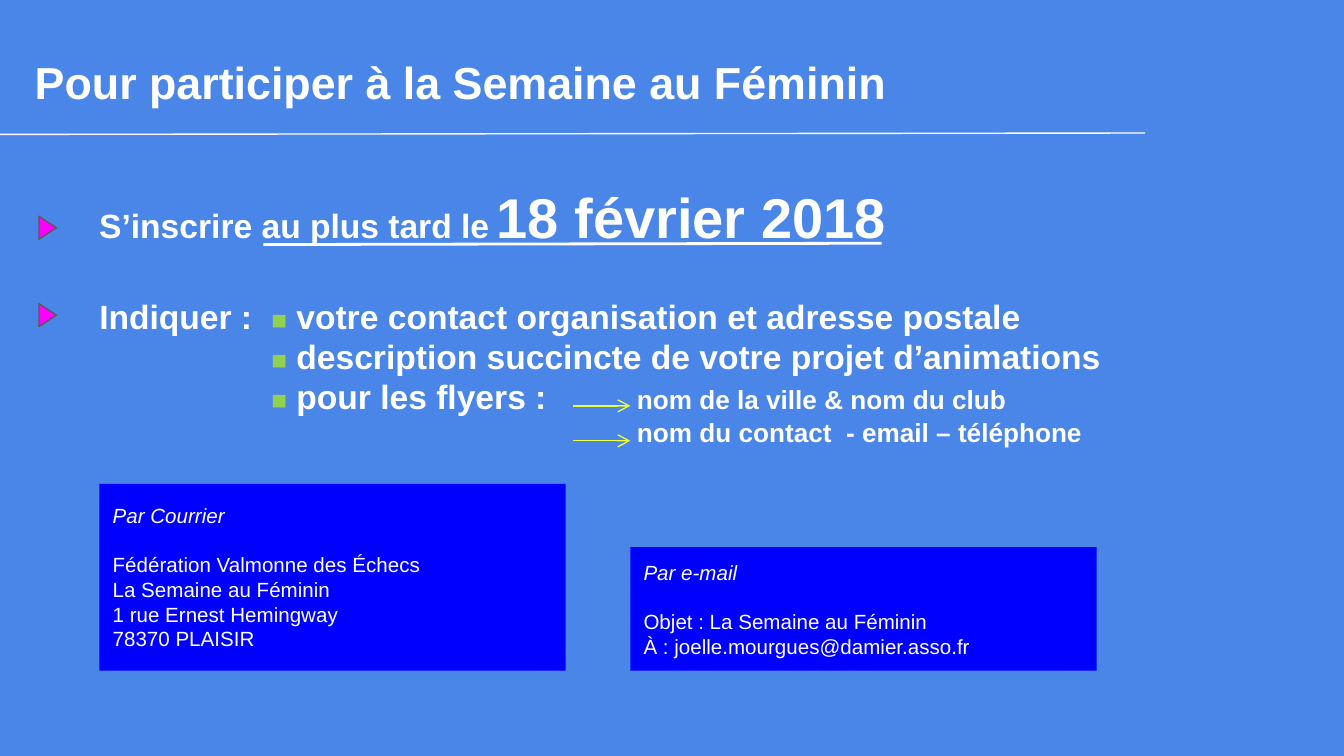
from dataclasses import dataclass

from lxml import etree
from pptx import Presentation
from pptx import util as u
from pptx.dml.color import RGBColor
from pptx.enum import shapes, text
from pptx.oxml import ns


@dataclass(frozen=True)
class Theme:
    font: str = "Arial"
    background: str = "4A86E8"
    ink: str = "FFFFFF"
    card: str = "0000FF"
    marker: str = "FF00FF"
    marker_edge: str = "595959"
    square: str = "92D050"
    arrow: str = "EDFE3B"
    title: int = 24
    date: int = 30
    body: int = 18
    detail: int = 14
    address: int = 11


THEME = Theme()


def rgb(value):
    return RGBColor.from_string(value)


def box_of(*lengths):
    return [u.Inches(length) for length in lengths]


def add_run(paragraph, words, size, color=THEME.ink, bold=False, italic=False):
    run = paragraph.add_run()
    run.text = words
    run.font.name = THEME.font
    run.font.size = u.Pt(size)
    run.font.bold = bold
    run.font.italic = italic
    run.font.color.rgb = rgb(color)


def prepare_frame(frame, anchor=text.MSO_ANCHOR.TOP):
    frame.word_wrap = True
    frame.vertical_anchor = anchor
    frame.margin_left = frame.margin_right = u.Inches(0.1)
    frame.margin_top = frame.margin_bottom = u.Inches(0.1)


def next_paragraph(frame, index):
    paragraph = frame.add_paragraph() if index else frame.paragraphs[0]
    paragraph.alignment = text.PP_ALIGN.LEFT
    return paragraph


def add_tab_stops(paragraph, stops):
    tabs = etree.SubElement(paragraph._p.get_or_add_pPr(), ns.qn("a:tabLst"))
    for stop in stops:
        etree.SubElement(tabs, ns.qn("a:tab"), pos=str(u.Inches(stop)), algn="l")


def add_bold_text(slide, place, lines, stops=()):
    frame = slide.shapes.add_textbox(*box_of(*place)).text_frame
    prepare_frame(frame)
    for index, line in enumerate(lines):
        paragraph = next_paragraph(frame, index)
        if stops:
            add_tab_stops(paragraph, stops)
        for words, size, color in line:
            add_run(paragraph, words, size, color, bold=True)


def add_line(slide, start, end, color, width, arrow=False):
    line = slide.shapes.add_connector(
        shapes.MSO_CONNECTOR.STRAIGHT, *box_of(*start, *end)
    )
    line.line.color.rgb = rgb(color)
    line.line.width = u.Pt(width)
    if arrow:
        etree.SubElement(line.line._get_or_add_ln(), ns.qn("a:tailEnd"), type="arrow")
    etree.SubElement(line._element.spPr, ns.qn("a:effectLst"))


def add_marker(slide, top):
    marker = slide.shapes.add_shape(
        shapes.MSO_SHAPE.ISOSCELES_TRIANGLE, *box_of(0.27, top, 0.17, 0.13)
    )
    marker.rotation = 90
    marker.shadow.inherit = False
    marker.fill.solid()
    marker.fill.fore_color.rgb = rgb(THEME.marker)
    marker.line.color.rgb = rgb(THEME.marker_edge)
    marker.line.width = u.Pt(0.75)


def add_card(slide, place, heading, details, anchor):
    card = slide.shapes.add_shape(shapes.MSO_SHAPE.RECTANGLE, *box_of(*place))
    card.shadow.inherit = False
    card.fill.solid()
    card.fill.fore_color.rgb = rgb(THEME.card)
    card.line.fill.background()
    prepare_frame(card.text_frame, anchor)
    for index, words in enumerate([heading, *details]):
        paragraph = next_paragraph(card.text_frame, index)
        if index == 0:
            paragraph.space_after = u.Pt(13)
        add_run(paragraph, words, THEME.address, italic=index == 0)


def main():
    deck = Presentation()
    deck.slide_width = u.Inches(10)
    deck.slide_height = deck.slide_width * 9 // 16
    slide = deck.slides.add_slide(deck.slide_layouts[6])
    slide.background.fill.solid()
    slide.background.fill.fore_color.rgb = rgb(THEME.background)

    title = "Pour participer à la Semaine au Féminin"
    add_bold_text(slide, (0.16, 0.31, 9.42, 0.61), [[(title, THEME.title, THEME.ink)]])
    add_line(slide, (0, 1), (8.52, 0.99), THEME.ink, 0.75)

    for top in (1.63, 2.28):
        add_marker(slide, top)

    deadline = [
        ("S’inscrire au plus tard le", THEME.body, THEME.ink),
        (" ", THEME.detail, THEME.ink),
        ("18 février 2018", THEME.date, THEME.ink),
    ]
    add_bold_text(slide, (0.64, 1.26, 7.54, 0.61), [deadline])
    add_line(slide, (1.96, 1.82), (6.56, 1.81), THEME.ink, 1.5)

    square = ("■", THEME.detail, THEME.square)
    requests = [
        ("Indiquer :\t", " votre contact organisation et adresse postale"),
        ("\t", " description succincte de votre projet d’animations"),
        ("\t", " pour les flyers :\t"),
    ]
    lines = [
        [(lead, THEME.body, THEME.ink), square, (request, THEME.body, THEME.ink)]
        for lead, request in requests
    ]
    lines[-1].append(("nom de la ville & nom du club", THEME.detail, THEME.ink))
    lines.append(
        [("\t\tnom du contact  - email – téléphone", THEME.detail, THEME.ink)]
    )
    add_bold_text(slide, (0.64, 2.1, 7.82, 1.37), lines, stops=(1.28, 4))

    add_card(
        slide,
        (0.74, 3.6, 3.47, 1.39),
        "Par Courrier",
        [
            "Fédération Valmonne des Échecs",
            "La Semaine au Féminin",
            "1 rue Ernest Hemingway",
            "78370 PLAISIR",
        ],
        text.MSO_ANCHOR.MIDDLE,
    )
    add_card(
        slide,
        (4.69, 4.07, 3.47, 0.92),
        "Par e-mail",
        ["Objet : La Semaine au Féminin", "À : joelle.mourgues@damier.asso.fr"],
        text.MSO_ANCHOR.TOP,
    )

    for height in (3.02, 3.28):
        add_line(slide, (4.26, height), (4.69, height), THEME.arrow, 0.75, arrow=True)

    deck.save("out.pptx")


if __name__ == "__main__":
    main()
